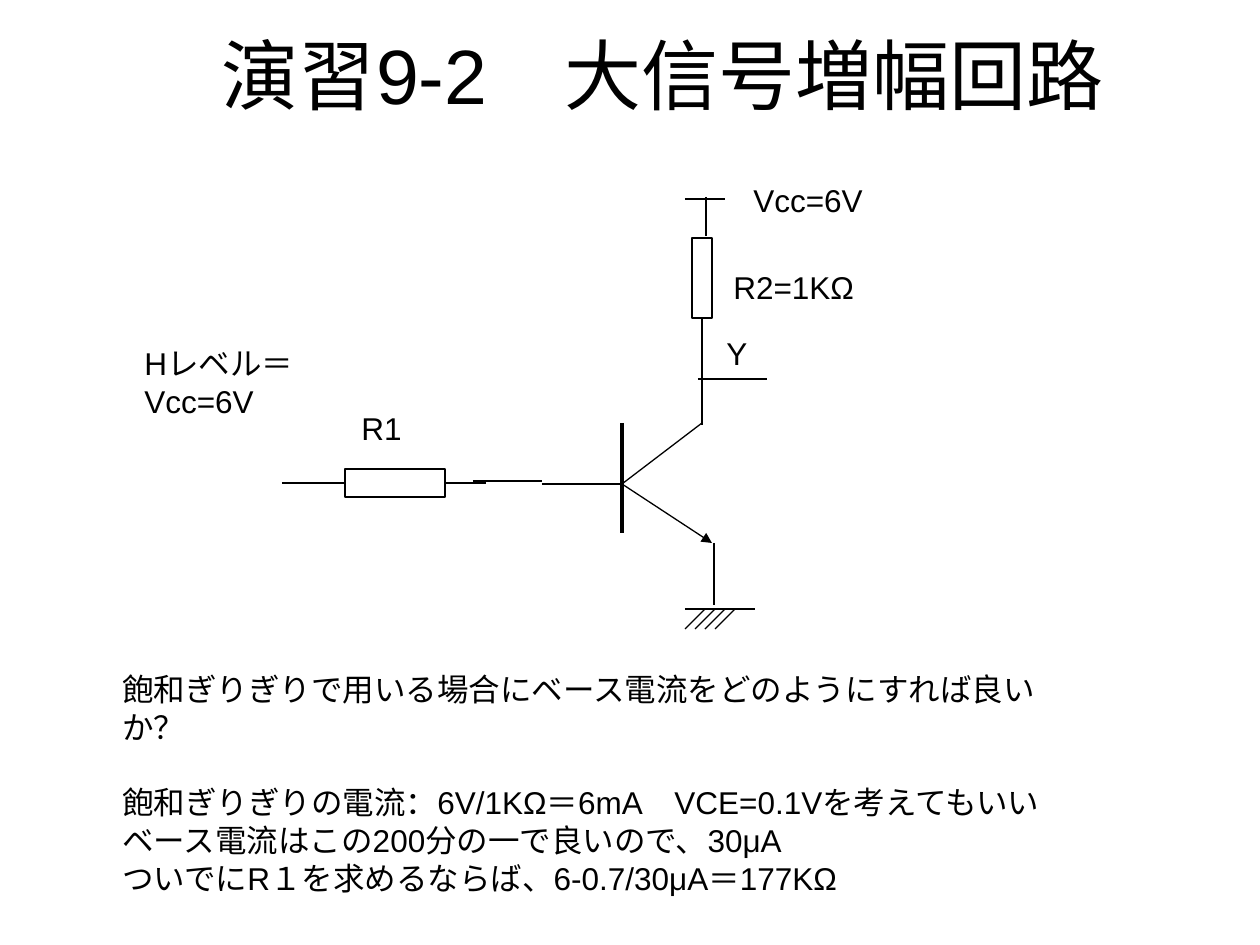
from typing import NamedTuple

from lxml import etree
from pptx import Presentation
from pptx.dml.color import RGBColor
from pptx.enum.shapes import MSO_CONNECTOR, MSO_SHAPE
from pptx.enum.text import MSO_ANCHOR, MSO_AUTO_SIZE, PP_ALIGN
from pptx.oxml.ns import qn
from pptx.util import Emu, Pt

BLACK = RGBColor(0, 0, 0)
STRAIGHT = MSO_CONNECTOR.STRAIGHT
RECT = MSO_SHAPE.RECTANGLE
GROW = MSO_AUTO_SIZE.SHAPE_TO_FIT_TEXT
TOP, MIDDLE = MSO_ANCHOR.TOP, MSO_ANCHOR.MIDDLE
LEFT, CENTER = PP_ALIGN.LEFT, PP_ALIGN.CENTER
SCALE = 914400 / 126
LEFT_SIDE, BOTTOM_SIDE, RIGHT_SIDE = 1, 2, 3


class Box(NamedTuple):
    x: int
    y: int
    w: int
    h: int


class Wire(NamedTuple):
    x1: int
    y1: int
    x2: int
    y2: int
    width: float = 0.75
    arrow: bool = False


class Label(NamedTuple):
    box: Box
    lines: tuple
    wrap: bool = False


WIRES = (
    Wire(622, 423, 622, 533, width=2.25),
    Wire(702, 423, 622, 484),
    Wire(622, 484, 712, 543, arrow=True),
    Wire(542, 484, 622, 484),
    Wire(685, 199, 725, 199),
    Wire(706, 197, 706, 236),
    Wire(714, 543, 714, 605),
    Wire(473, 481, 542, 481),
    Wire(698, 379, 767, 379),
)
GROUND = (Wire(685, 609, 755, 609),) + tuple(
    Wire(x, 609, x - 20, 629) for x in range(705, 736, 10)
)
LABELS = (
    Label(Box(721, 262, 151, 50), ("R2=1KΩ",)),
    Label(Box(714, 328, 47, 50), ("Y",)),
    Label(Box(349, 403, 66, 50), ("R1",)),
    Label(Box(741, 175, 140, 50), ("Vcc=6V",)),
    Label(Box(132, 338, 280, 50), ("Hレベル＝Vcc=6V",), True),
)
NOTES = Label(
    Box(110, 664, 945, 204),
    (
        "飽和ぎりぎりで用いる場合にベース電流をどのようにすれば良いか？",
        "飽和ぎりぎりの電流：6V/1KΩ＝6mA　VCE=0.1Vを考えてもいい",
        "ベース電流はこの200分の一で良いので、30μA",
        "ついでにR１を求めるならば、6-0.7/30μA＝177KΩ",
    ),
    True,
)


def px(n: int) -> Emu:
    """Turn pixels into EMU."""
    return Emu(round(n * SCALE))


def apply(item, values: dict) -> None:
    """Set each named attribute of an item."""
    for name, value in values.items():
        setattr(item, name, value)


def write(frame, lines: tuple, size: int, align, values: dict) -> None:
    """Fill a text frame with formatted paragraphs."""
    apply(frame, values)
    for i, line in enumerate(lines):
        para = frame.paragraphs[0] if i == 0 else frame.add_paragraph()
        para.alignment = align
        run = para.add_run()
        run.text = line
        apply(run.font, {"size": Pt(size), "name": "Arial"})
        run.font.color.rgb = BLACK


def draw_wire(shapes, wire: Wire):
    """Draw a straight line, with an arrowhead if asked."""
    line = shapes.add_connector(STRAIGHT, *map(px, wire[:4]))
    line.line.color.rgb = BLACK
    line.line.width = Pt(wire.width)
    if wire.arrow:
        etree.SubElement(line.line._get_or_add_ln(), qn("a:tailEnd"), type="triangle")
    etree.SubElement(line._element.spPr, qn("a:effectLst"))
    return line


def draw_part(shapes, box: Box):
    """Draw a resistor."""
    part = shapes.add_shape(RECT, *map(px, box))
    part.shadow.inherit = False
    part.fill.background()
    part.line.color.rgb = BLACK
    part.line.width = Pt(0.75)
    return part


def draw_label(shapes, label: Label):
    """Draw a text box and return its frame."""
    frame = shapes.add_textbox(*map(px, label.box)).text_frame
    values = {"word_wrap": label.wrap, "auto_size": GROW, "vertical_anchor": TOP}
    write(frame, label.lines, 18, LEFT, values)
    return frame


def main() -> None:
    """Build the slide."""
    deck = Presentation()
    apply(deck, {"slide_width": px(1260), "slide_height": px(945)})
    slide = deck.slides.add_slide(deck.slide_layouts[5])
    shapes = slide.shapes

    title = shapes.title
    place = zip(("left", "top", "width", "height"), map(px, Box(96, -5, 1134, 158)))
    apply(title, dict(place))
    write(title.text_frame, ("演習9-2　大信号増幅回路",), 44, CENTER,
          {"vertical_anchor": MIDDLE})

    for wire in WIRES:
        draw_wire(shapes, wire)
    ground = shapes.add_group_shape()
    for wire in GROUND:
        draw_wire(ground.shapes, wire)

    load = draw_part(shapes, Box(692, 238, 20, 80))
    base = draw_part(shapes, Box(345, 469, 100, 28))
    draw_wire(shapes, Wire(702, 318, 702, 425)).begin_connect(load, BOTTOM_SIDE)
    draw_wire(shapes, Wire(445, 483, 486, 483)).begin_connect(base, RIGHT_SIDE)
    draw_wire(shapes, Wire(282, 483, 345, 483)).end_connect(base, LEFT_SIDE)

    for label in LABELS:
        draw_label(shapes, label)
    notes = draw_label(shapes, NOTES)
    notes.paragraphs[1].space_before = Pt(21.5)
    deck.save("out.pptx")


if __name__ == "__main__":
    main()
